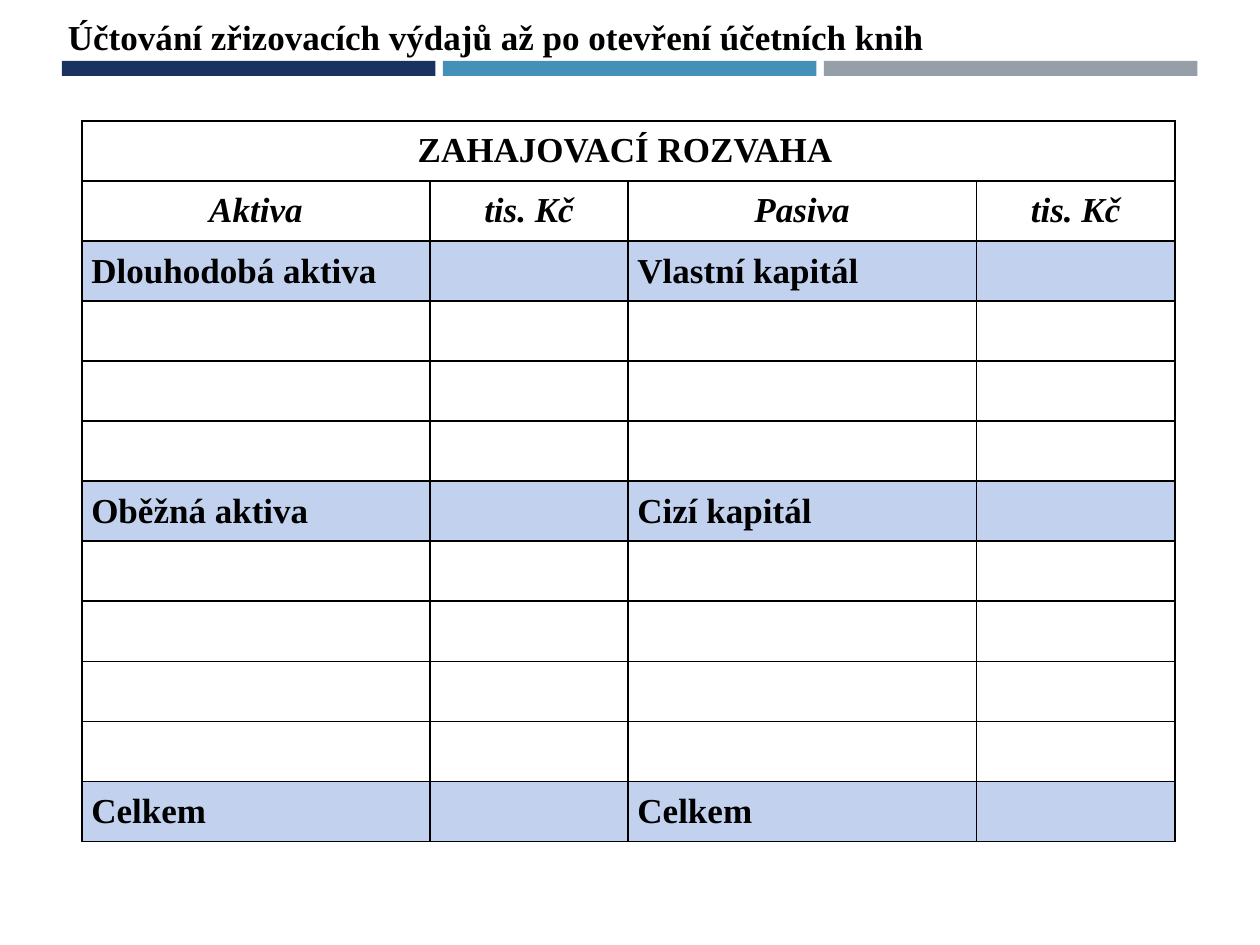
from lxml import etree
from pptx import Presentation
from pptx.dml.color import RGBColor
from pptx.enum.shapes import MSO_SHAPE
from pptx.enum.text import MSO_ANCHOR, MSO_AUTO_SIZE, PP_ALIGN
from pptx.oxml.ns import qn
from pptx.util import Cm, Pt

RECTANGLE = MSO_SHAPE.RECTANGLE
MIDDLE = MSO_ANCHOR.MIDDLE
FIT_SHAPE = MSO_AUTO_SIZE.SHAPE_TO_FIT_TEXT
LEFT, CENTER, JUSTIFY = PP_ALIGN.LEFT, PP_ALIGN.CENTER, PP_ALIGN.JUSTIFY

COLORS = {
    "text": "000000",
    "border": "000000",
    "section": "C2D1EE",
    "navy": "1A3260",
    "blue": "4590B8",
    "gray": "969FA7",
}
HEADING = "ZAHAJOVACÍ ROZVAHA "
COLUMN_HEADS = ["Aktiva", "tis. Kč", "Pasiva", "tis. Kč"]
SECTIONS = {
    2: ("Dlouhodobá aktiva", "Vlastní kapitál"),
    6: ("Oběžná aktiva", "Cizí kapitál"),
    11: ("Celkem", "Celkem"),
}
COLUMN_WIDTHS = [7.02, 3.99, 7.02, 4.01]
ROW_COUNT = 12
ROW_HEIGHT = 1.21


class SlideBuilder:
    """Draws bars, text and a balance sheet table in one style."""

    font_name = "Times New Roman"
    font_size = Pt(20)

    def __init__(self, slide):
        self.s = slide

    def color(self, name):
        return RGBColor.from_string(COLORS[name])

    def style(self, p, italic=False):
        p.font.name = self.font_name
        p.font.size = self.font_size
        p.font.bold = True
        p.font.italic = italic
        p.font.color.rgb = self.color("text")

    def bar(self, left, top, width, height, color):
        sp = self.s.shapes.add_shape(RECTANGLE, Cm(left), Cm(top), Cm(width), Cm(height))
        sp.shadow.inherit = False
        sp.fill.solid()
        sp.fill.fore_color.rgb = self.color(color)
        sp.line.fill.background()

    def title(self, left, top, width, height, text):
        sp = self.s.shapes.add_textbox(Cm(left), Cm(top), Cm(width), Cm(height))
        tf = sp.text_frame
        tf.word_wrap = False
        tf.auto_size = FIT_SHAPE
        p = tf.paragraphs[0]
        p.text = text
        self.style(p)

    def table(self, left, top, widths, row_count, row_height):
        frame = self.s.shapes.add_table(
            row_count, len(widths), Cm(left), Cm(top),
            Cm(sum(widths)), Cm(row_count * row_height))
        table = frame.table
        table.first_row = table.horz_banding = False
        for column, width in zip(table.columns, widths):
            column.width = Cm(width)
        for row in table.rows:
            row.height = Cm(row_height)
        for cell in table.iter_cells():
            self.borders(cell)
            cell.fill.background()
        return table

    def borders(self, cell):
        tc_pr = cell._tc.get_or_add_tcPr()
        for side in ("a:lnL", "a:lnR", "a:lnT", "a:lnB"):
            ln = etree.SubElement(tc_pr, qn(side), w=str(Pt(1)))
            fill = etree.SubElement(ln, qn("a:solidFill"))
            etree.SubElement(fill, qn("a:srgbClr"), val=COLORS["border"])

    def cell_text(self, cell, text, align, italic=False):
        cell.vertical_anchor = MIDDLE
        cell.margin_left = cell.margin_right = Cm(0.19)
        cell.margin_top = cell.margin_bottom = 0
        p = cell.text_frame.paragraphs[0]
        p.text = text
        p.alignment = align
        self.style(p, italic)
        return p

    def section(self, table, row, assets, liabilities):
        for column in range(len(table.columns)):
            fill = table.cell(row, column).fill
            fill.solid()
            fill.fore_color.rgb = self.color("section")
        self.cell_text(table.cell(row, 0), assets, LEFT)
        self.cell_text(table.cell(row, 2), liabilities, JUSTIFY)


def main():
    prs = Presentation()
    prs.slide_width, prs.slide_height = Cm(25.4), Cm(19.05)
    builder = SlideBuilder(prs.slides.add_slide(prs.slide_layouts[6]))

    for i, color in enumerate(("navy", "blue", "gray")):
        builder.bar(1.25 + i * 7.68, 1.23, 7.53, 0.3, color)
    builder.title(1.12, 0.18, 17.88, 1.12,
                  "Účtování zřizovacích výdajů až po otevření účetních knih")

    table = builder.table(1.65, 2.44, COLUMN_WIDTHS, ROW_COUNT, ROW_HEIGHT)
    table.cell(0, 0).merge(table.cell(0, 3))
    p = builder.cell_text(table.cell(0, 0), HEADING, CENTER)
    p.space_before = Pt(6)
    for column, text in enumerate(COLUMN_HEADS):
        builder.cell_text(table.cell(1, column), text, CENTER, italic=True)
    for row, names in SECTIONS.items():
        builder.section(table, row, *names)

    prs.save("out.pptx")


if __name__ == "__main__":
    main()
